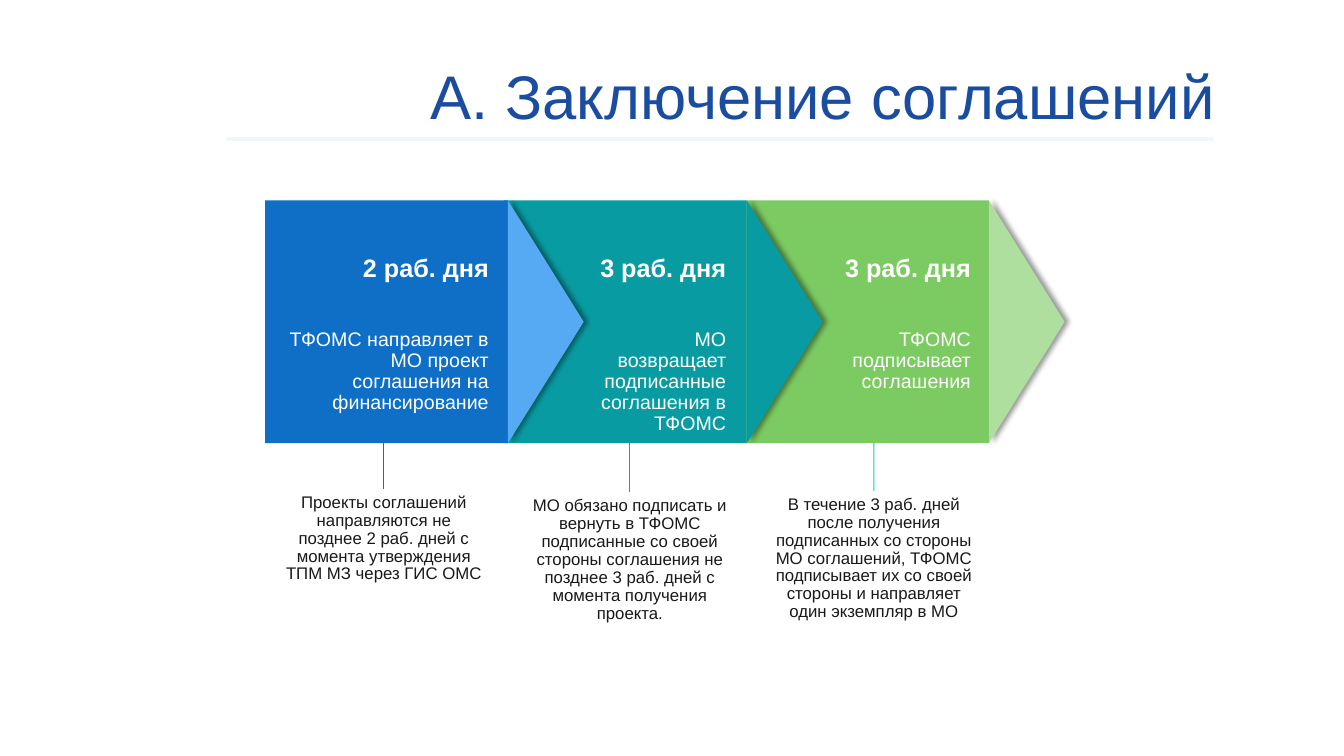
import pptx
import pptx.util
import pptx.dml.color
import pptx.enum.shapes
import pptx.enum.text
import pptx.oxml
import pptx.oxml.ns
from pptx.util import Cm

SHAPES = pptx.enum.shapes.MSO_SHAPE
ALIGN = pptx.enum.text.PP_ALIGN
ANCHOR = pptx.enum.text.MSO_ANCHOR
NAMESPACE = pptx.oxml.ns.nsdecls("a")
NO_EFFECTS = f"<a:effectLst {NAMESPACE}/>"
SHADOW = (
    f'<a:effectLst {NAMESPACE}><a:outerShdw blurRad="50800" dist="38100" dir="0" algn="l" '
    'rotWithShape="0"><a:srgbClr val="000000"><a:alpha val="40000"/></a:srgbClr>'
    "</a:outerShdw></a:effectLst>"
)


def color(value):
    return pptx.dml.color.RGBColor.from_string(value)


def add_text(left, top, width, height, text, size, text_color, align, bold=False):
    box = slide.shapes.add_textbox(Cm(left), Cm(top), Cm(width), Cm(height))
    box.text_frame.word_wrap = True
    box.text_frame.text = text
    paragraph = box.text_frame.paragraphs[0]
    paragraph.alignment = align
    paragraph.line_spacing = 0.89
    font = paragraph.runs[0].font
    font.name = "Arial"
    font.size = pptx.util.Pt(size)
    font.bold = bold
    font.color.rgb = color(text_color)
    return box


presentation = pptx.Presentation()
presentation.slide_width = Cm(33.87)
presentation.slide_height = Cm(19.05)
slide = presentation.slides.add_slide(presentation.slide_layouts[6])

title = add_text(1.45, 1.5, 29.44, 2.01, "А. Заключение соглашений", 44, "1A4DA0", ALIGN.RIGHT)
title.text_frame.vertical_anchor = ANCHOR.MIDDLE
title.text_frame.paragraphs[0].line_spacing = 0.9

STRAIGHT = pptx.enum.shapes.MSO_CONNECTOR.STRAIGHT
underline = slide.shapes.add_connector(STRAIGHT, Cm(5.72), Cm(3.51), Cm(30.56), Cm(3.51))
underline.line.color.rgb = color("EEF7FF")
underline.line.width = pptx.util.Pt(3)
underline._element.spPr.append(pptx.oxml.parse_xml(NO_EFFECTS))

captions = [
    (6.88, 12.32, 3.0, "0F6FC6",
     "Проекты соглашений направляются не позднее 2 раб. дней с момента утверждения "
     "ТПМ МЗ через ГИС ОМС"),
    (13.08, 12.4, 5.74, "009DD9",
     "МО обязано подписать и вернуть в ТФОМС подписанные со своей стороны соглашения "
     "не позднее 3 раб. дней с момента получения проекта."),
    (19.23, 12.37, 4.37, "0BD0D9",
     "В течение 3 раб. дней после получения подписанных со стороны МО соглашений, "
     "ТФОМС подписывает их со своей стороны и направляет один экземпляр в МО"),
]
caption_width = 5.59
for left, top, height, line_color, text in captions:
    caption = add_text(left, top, caption_width, height, text, 12, "191919", ALIGN.CENTER)
    center = Cm(left + caption_width / 2)
    connector = slide.shapes.add_connector(STRAIGHT, center, Cm(top), center, Cm(9.78))
    connector.begin_connect(caption, 0)
    connector.line.color.rgb = color(line_color)
    connector.line.width = pptx.util.Pt(0.75)
    connector._element.spPr.append(pptx.oxml.parse_xml(NO_EFFECTS))

stages = [
    (18.8, "7CCA62", "AFDF9F", 24.72, 4.19, "3 раб. дня", "ТФОМС подписывает соглашения"),
    (12.7, "089CA2", "089CA2", 18.55, 4.14, "3 раб. дня",
     "МО возвращает подписанные соглашения в ТФОМС"),
    (6.68, "0F6FC6", "56A9F3", 12.57, 5.66, "2 раб. дня",
     "ТФОМС направляет в МО проект соглашения на финансирование"),
]
stage_top = 5.05
side = 6.12
tip = 1.91
inset = (side - tip) / 2
for left, stage_color, tip_color, text_right, text_width, term, action in stages:
    block = slide.shapes.add_shape(SHAPES.RECTANGLE, Cm(left), Cm(stage_top), Cm(side), Cm(side))
    arrow = slide.shapes.add_shape(
        SHAPES.ISOSCELES_TRIANGLE,
        Cm(left + side - inset), Cm(stage_top + inset), Cm(side), Cm(tip),
    )
    arrow.rotation = 90
    for shape, fill_color in ((block, stage_color), (arrow, tip_color)):
        shape.fill.solid()
        shape.fill.fore_color.rgb = color(fill_color)
        shape.line.fill.background()
    block.shadow.inherit = False
    arrow._element.spPr.append(pptx.oxml.parse_xml(SHADOW))
    add_text(text_right - text_width, 8.18, text_width, 2.92, action, 14, "FFFFFF", ALIGN.RIGHT)
    add_text(text_right - 5.2, 6.32, 5.2, 0.94, term, 18, "FFFFFF", ALIGN.RIGHT, bold=True)

presentation.save("out.pptx")
